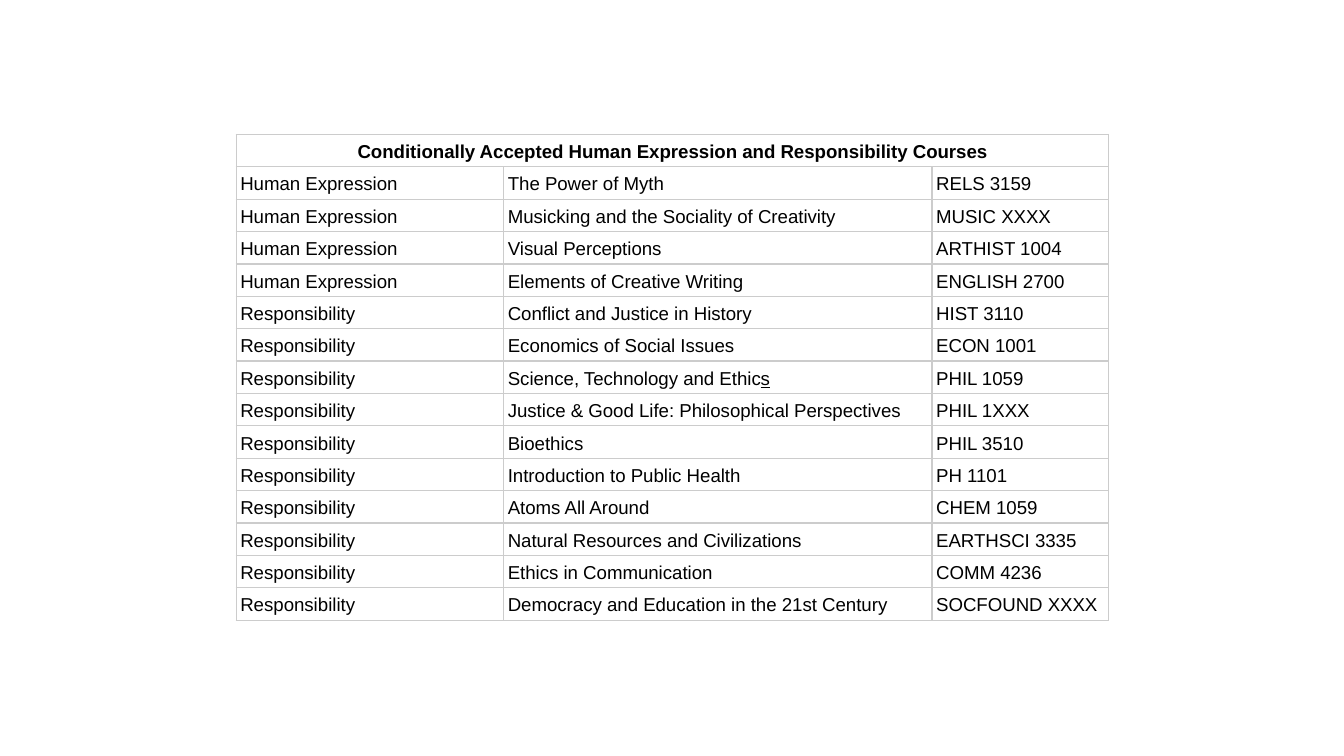
import pptx
import pptx.util
import pptx.dml.color
import pptx.enum.text
import pptx.oxml
import pptx.oxml.ns
from lxml import etree

Pt = pptx.util.Pt
BLACK = pptx.dml.color.RGBColor(0x00, 0x00, 0x00)
GRID = pptx.dml.color.RGBColor(0xCC, 0xCC, 0xCC)

TITLE = "Conditionally Accepted Human Expression and Responsibility Courses"
COURSES = {
    "Human Expression": [
        ("The Power of Myth", "RELS 3159"),
        ("Musicking and the Sociality of Creativity", "MUSIC XXXX"),
        ("Visual Perceptions", "ARTHIST 1004"),
        ("Elements of Creative Writing", "ENGLISH 2700"),
    ],
    "Responsibility": [
        ("Conflict and Justice in History", "HIST 3110"),
        ("Economics of Social Issues", "ECON 1001"),
        ("Science, Technology and Ethics", "PHIL 1059"),
        ("Justice & Good Life: Philosophical Perspectives", "PHIL 1XXX"),
        ("Bioethics", "PHIL 3510"),
        ("Introduction to Public Health", "PH 1101"),
        ("Atoms All Around", "CHEM 1059"),
        ("Natural Resources and Civilizations", "EARTHSCI 3335"),
        ("Ethics in Communication", "COMM 4236"),
        ("Democracy and Education in the 21st Century", "SOCFOUND XXXX"),
    ],
}
UNDERLINED_ENDING = {"Science, Technology and Ethics": "s"}

LEFT, TOP = 126.5, 72
COLUMN_WIDTHS = (143.3, 229.5, 94.5)
ROW_HEIGHT = 16.87
INSET = 2.25


def add_borders(cell):
    properties = cell._tc.get_or_add_tcPr()
    for position, side in enumerate(("lnL", "lnR", "lnT", "lnB")):
        line = pptx.oxml.parse_xml(
            f'<a:{side} {pptx.oxml.ns.nsdecls("a")} w="{Pt(0.75)}">'
            f'<a:solidFill><a:srgbClr val="{GRID}"/></a:solidFill></a:{side}>'
        )
        properties.insert(position, line)


def fill_cell(cell, text, bold=False, align=pptx.enum.text.PP_ALIGN.LEFT):
    """Write the text, with its ending underlined where that is listed."""
    ending = UNDERLINED_ENDING.get(text, "")
    para = cell.text_frame.paragraphs[0]
    para.text = text.removesuffix(ending)
    if ending:
        span = para.add_run()
        span.text = ending
        span.font.underline = True
    para.alignment = align
    para.line_spacing = 1.15
    for span in para.runs:
        span.font.name = "Arial"
        span.font.size = Pt(10)
        span.font.bold = bold
        span.font.color.rgb = BLACK


rows = [(area, *course) for area, courses in COURSES.items() for course in courses]

deck = pptx.Presentation()
deck.slide_width, deck.slide_height = Pt(720), Pt(405)
page = deck.slides.add_slide(deck.slide_layouts[6])

row_count = len(rows) + 1
table = page.shapes.add_table(
    row_count, len(COLUMN_WIDTHS), Pt(LEFT), Pt(TOP),
    Pt(sum(COLUMN_WIDTHS)), Pt(ROW_HEIGHT * row_count),
).table
table.first_row = table.horz_banding = False
for column, width in zip(table.columns, COLUMN_WIDTHS):
    column.width = Pt(width)
for row in table.rows:
    row.height = Pt(ROW_HEIGHT)

for cell in table.iter_cells():
    cell.fill.background()
    cell.vertical_anchor = pptx.enum.text.MSO_ANCHOR.BOTTOM
    cell.margin_left = cell.margin_right = Pt(INSET)
    cell.margin_top = cell.margin_bottom = Pt(INSET)
    add_borders(cell)

heading = table.cell(0, 0)
heading.merge(table.cell(0, len(COLUMN_WIDTHS) - 1))
fill_cell(heading, TITLE, bold=True, align=pptx.enum.text.PP_ALIGN.CENTER)
for row_index, texts in enumerate(rows, start=1):
    for column_index, text in enumerate(texts):
        fill_cell(table.cell(row_index, column_index), text)

deck.save("out.pptx")
